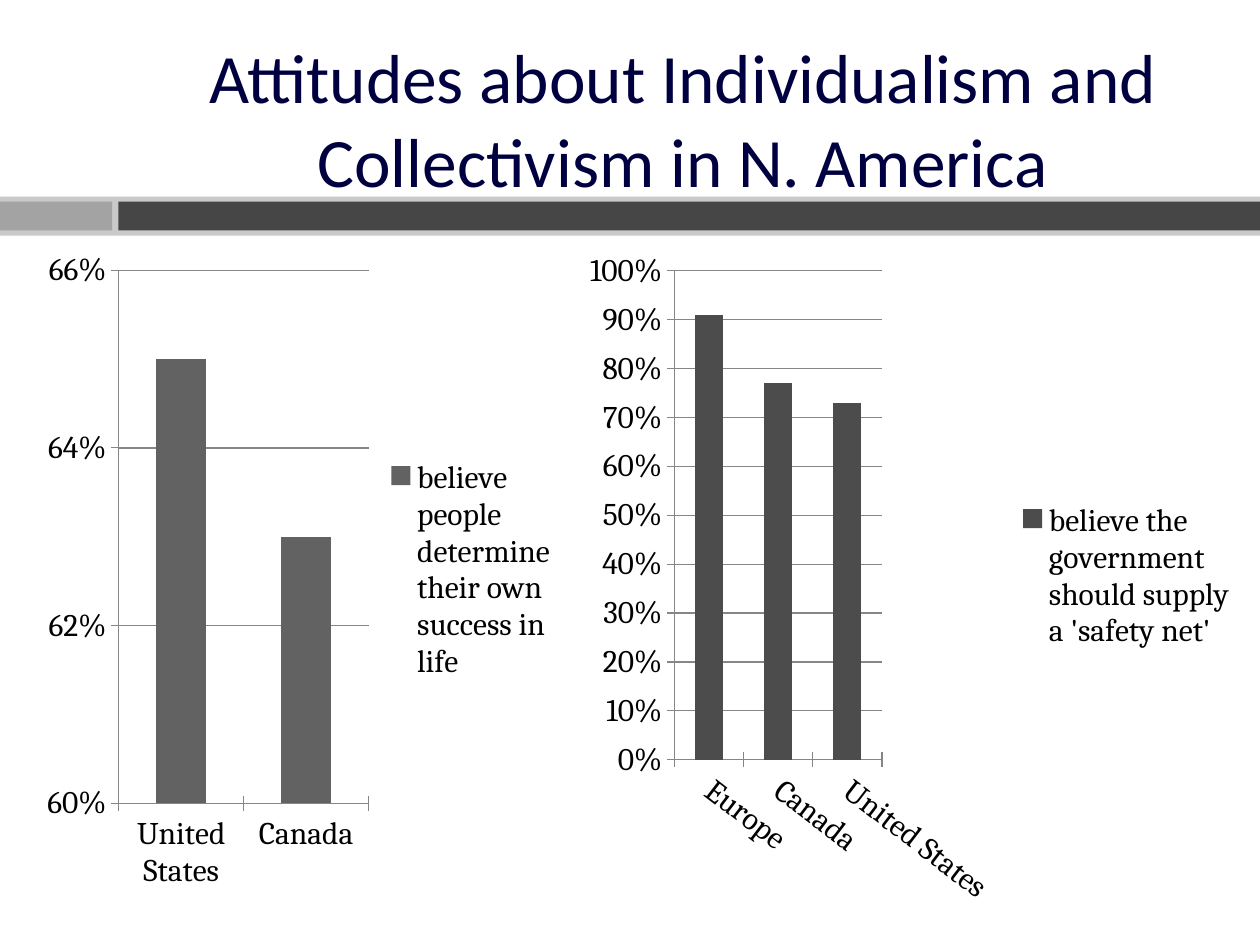
from lxml import etree
from pptx import Presentation
from pptx.chart.data import CategoryChartData
from pptx.dml.color import RGBColor
from pptx.enum.chart import XL_CHART_TYPE, XL_LEGEND_POSITION, XL_TICK_MARK
from pptx.enum.shapes import MSO_SHAPE
from pptx.enum.text import MSO_ANCHOR, PP_ALIGN
from pptx.oxml.ns import qn
from pptx.util import Inches, Pt

COLUMNS = XL_CHART_TYPE.COLUMN_CLUSTERED
RIGHT = XL_LEGEND_POSITION.RIGHT
CROSS = XL_TICK_MARK.CROSS
RECTANGLE = MSO_SHAPE.RECTANGLE
MIDDLE = MSO_ANCHOR.MIDDLE
CENTER = PP_ALIGN.CENTER
AXIS_GRAY = "868686"


def color(hex_code):
    return RGBColor.from_string(hex_code)


def add_text(text, box, *, font, size, fill, align, anchor):
    frame = slide.shapes.add_textbox(*map(Inches, box)).text_frame
    frame.word_wrap = True
    frame.vertical_anchor = anchor
    paragraph = frame.paragraphs[0]
    paragraph.alignment = align
    run = paragraph.add_run()
    run.text = text
    run.font.name = font
    run.font.size = Pt(size)
    run.font.color.rgb = color(fill)


prs = Presentation()
prs.slide_width, prs.slide_height = Inches(10), Inches(7.5)
slide = prs.slides.add_slide(prs.slide_layouts[6])

# Divider band
for left, top, width, height, fill in [
    (0, 1.56, 10, 0.31, "C9C9C9"),
    (0, 1.6, 0.89, 0.23, "A3A3A3"),
    (0.94, 1.6, 9.06, 0.23, "464646"),
]:
    band = slide.shapes.add_shape(
        RECTANGLE, Inches(left), Inches(top), Inches(width), Inches(height))
    band.shadow.inherit = False
    band.fill.solid()
    band.fill.fore_color.rgb = color(fill)
    band.line.fill.background()

add_text("Attitudes about Individualism and Collectivism in N. America",
         (0.92, 0.31, 9, 1.25), font="Calibri", size=39.6, fill="000040",
         align=CENTER, anchor=MIDDLE)

# Plot areas are fractions of the chart; label angles are in degrees
surveys = [
    {"box": (0.31, 1.88, 4.22, 5.29),
     "belief": "believe people determine their own success in life",
     "shares": {"United States": 0.65, "Canada": 0.63},
     "scale": (0.6, 0.66, 0.02), "fill": "626262",
     "plot": {"x": 0.15, "y": 0.05, "w": 0.47, "h": 0.8}, "angle": 0},
    {"box": (4.61, 1.88, 5.31, 5.39),
     "belief": "believe the government should supply a 'safety net'",
     "shares": {"Europe": 0.91, "Canada": 0.77, "United States": 0.73},
     "scale": (0, 1, 0.1), "fill": "4C4C4C",
     "plot": {"x": 0.14, "y": 0.05, "w": 0.31, "h": 0.72}, "angle": 37.5},
]

for survey in surveys:
    data = CategoryChartData(number_format="0%")
    data.categories = list(survey["shares"])
    data.add_series(survey["belief"], list(survey["shares"].values()))
    chart = slide.shapes.add_chart(
        COLUMNS, *map(Inches, survey["box"]), data).chart
    chart.has_title = False
    chart.font.name = "Cambria"
    chart.font.size = Pt(18)
    chart.font.color.rgb = color("000000")
    chart.has_legend = True
    chart.legend.position = RIGHT
    chart.legend.include_in_layout = False

    bars = chart.plots[0]
    bars.vary_by_categories = False
    bars.gap_width = 150
    bars.series[0].format.fill.solid()
    bars.series[0].format.fill.fore_color.rgb = color(survey["fill"])

    shares_axis, places_axis = chart.value_axis, chart.category_axis
    low, high, step = survey["scale"]
    shares_axis.minimum_scale = low
    shares_axis.maximum_scale = high
    shares_axis.major_unit = step
    shares_axis.has_major_gridlines = True
    shares_axis.tick_labels.number_format = "0%"
    shares_axis.tick_labels.number_format_is_linked = False
    for axis in (shares_axis, places_axis):
        axis.major_tick_mark = CROSS
        axis.format.line.color.rgb = color(AXIS_GRAY)
        axis.tick_labels.font.size = Pt(18)
    shares_axis.major_gridlines.format.line.color.rgb = color(AXIS_GRAY)

    label_body = places_axis._element.find(f"{qn('c:txPr')}/{qn('a:bodyPr')}")
    label_body.set("rot", str(int(survey["angle"] * 60000)))

    plot_area = chart._chartSpace.find(f".//{qn('c:plotArea')}")
    for automatic in plot_area.findall(qn("c:layout")):
        plot_area.remove(automatic)
    layout = etree.Element(qn("c:layout"))
    plot_area.insert(0, layout)
    manual = etree.SubElement(layout, qn("c:manualLayout"))
    modes = {"layoutTarget": "inner", "xMode": "edge", "yMode": "edge"}
    for tag, setting in {**modes, **survey["plot"]}.items():
        etree.SubElement(manual, qn(f"c:{tag}")).set("val", str(setting))

prs.save("out.pptx")
